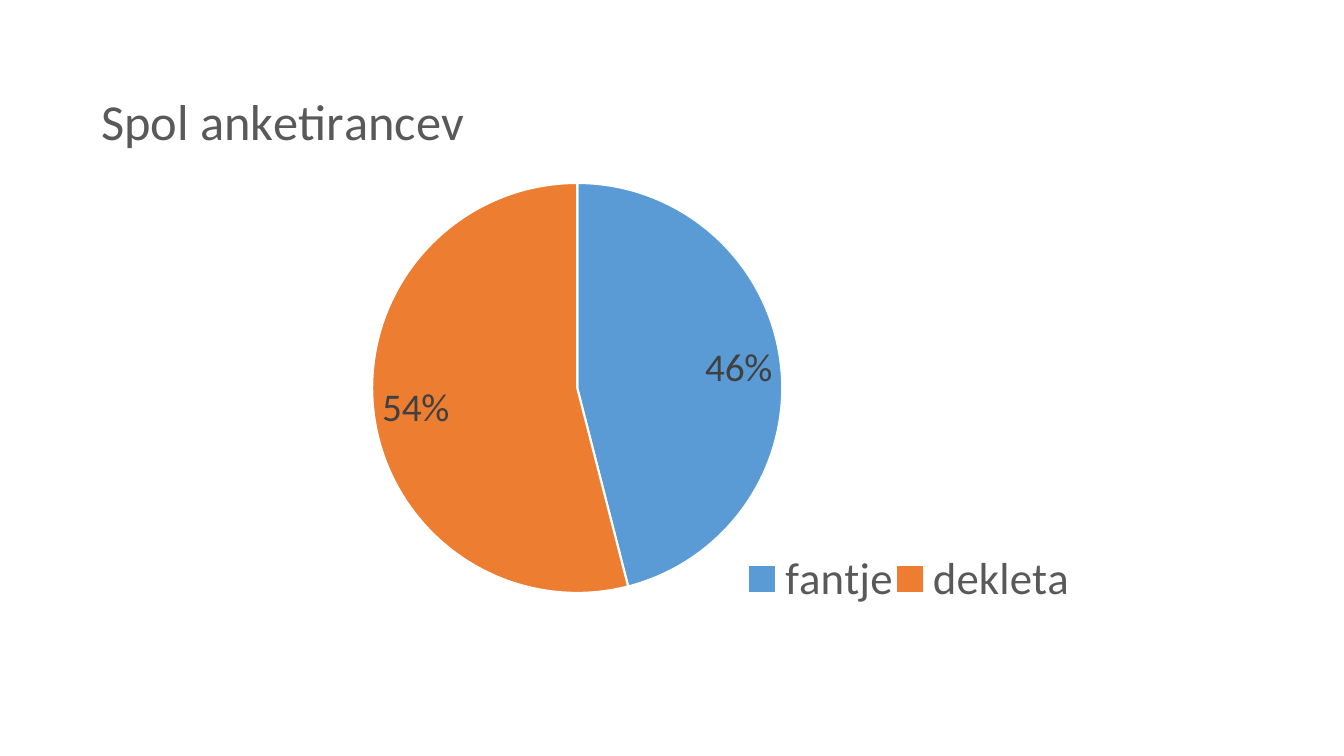
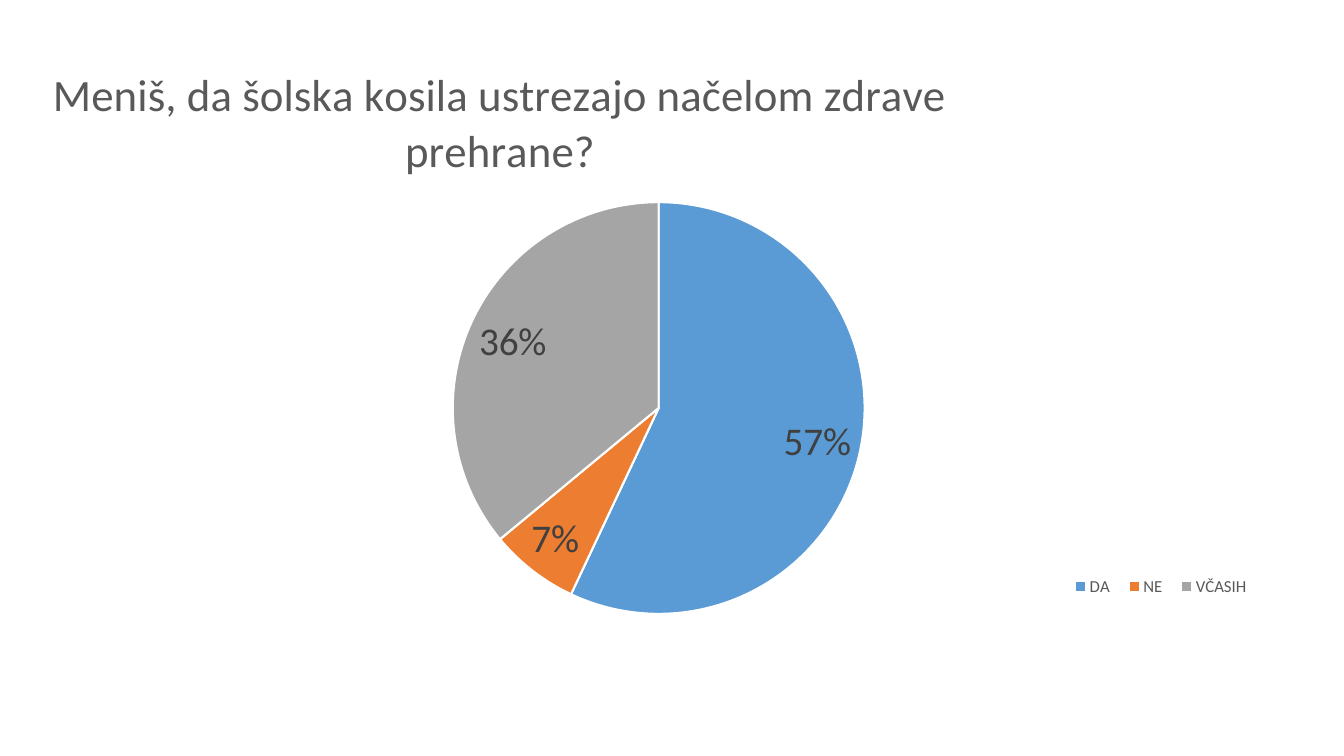
from lxml import etree
from pptx import Presentation
from pptx import util as u
from pptx.chart import data as cd
from pptx.dml import color as dc
from pptx.enum import chart as ec
from pptx.oxml import ns

WIDE, HIGH = u.Inches(13.33), u.Inches(7.5)
FACE = "Calibri"
WHITE = dc.RGBColor(0xFF, 0xFF, 0xFF)
GREY = dc.RGBColor(0x59, 0x59, 0x59)
DARK = dc.RGBColor(0x40, 0x40, 0x40)
BLUE = dc.RGBColor(0x5B, 0x9B, 0xD5)
ORANGE = dc.RGBColor(0xED, 0x7D, 0x31)
SILVER = dc.RGBColor(0xA5, 0xA5, 0xA5)
FILLS = (BLUE, ORANGE, SILVER)

PIES = (
    {
        "box": (0.061, 0.077, 0.737, 0.835),
        "title": "Spol anketirancev",
        "parts": {"fantje": 46, "dekleta": 54},
        "format": '0"%"',
        "sizes": {"title": 36, "legend": 32, "label": 28},
        "spots": {
            "title": (0.01, 0.03),
            "legend": (0.67, 0.78, 0.33, 0.09),
            "plotArea": (0.293, 0.197, 0.414, 0.651),
        },
    },
    {
        "box": (0.024, 0.064, 0.923, 0.855),
        "title": "Meniš, da šolska kosila ustrezajo načelom zdrave prehrane?",
        "parts": {"DA": 0.57, "NE": 0.07, "VČASIH": 0.36},
        "format": "0%",
        "sizes": {"title": 32, "legend": 12, "label": 28},
        "spots": {
            "title": (0.01, 0.01),
            "legend": (0.83, 0.81, 0.16, 0.045),
            "plotArea": (0.339, 0.238, 0.332, 0.637),
        },
    },
)


def style(item, **values):
    """Set each named value on the item."""
    for name, value in values.items():
        setattr(item, name, value)


def write(font, size, tint):
    """Give a font the shared face with a size and colour."""
    style(font, name=FACE, size=u.Pt(size), bold=False)
    font.color.rgb = tint


def place(chart, name, spot):
    """Fix a chart part at shares of the chart's size."""
    part = chart._chartSpace.find(".//" + ns.qn("c:" + name))
    for old in part.findall(ns.qn("c:layout")):
        part.remove(old)
    layout = etree.Element(ns.qn("c:layout"))
    manual = etree.SubElement(layout, ns.qn("c:manualLayout"))
    rules = {"layoutTarget": "inner"} if name == "plotArea" else {}
    rules.update(xMode="edge", yMode="edge")
    rules.update(zip("xywh", spot))
    for key, value in rules.items():
        etree.SubElement(manual, ns.qn("c:" + key)).set("val", str(value))
    heads = [ns.qn("c:tx"), ns.qn("c:legendPos")]
    part.insert(sum(child.tag in heads for child in part), layout)


def paint(plot, pie):
    """Colour the slices and show their values."""
    plot.vary_by_categories = True
    for index, fill in zip(range(len(pie["parts"])), FILLS):
        slice_form = plot.series[0].points[index].format
        slice_form.fill.solid()
        slice_form.fill.fore_color.rgb = fill
        slice_form.line.color.rgb = WHITE
        slice_form.line.width = u.Pt(1.5)
    plot.has_data_labels = True
    labels = plot.data_labels
    style(labels, show_value=True, show_percentage=False,
          number_format=pie["format"], number_format_is_linked=False,
          position=ec.XL_LABEL_POSITION.BEST_FIT)
    write(labels.font, pie["sizes"]["label"], DARK)


def draw(slide, pie):
    """Draw one titled pie chart in its box."""
    data = cd.CategoryChartData()
    data.categories = list(pie["parts"])
    data.add_series("Series 1", list(pie["parts"].values()))
    box = [int(share * side) for share, side in zip(pie["box"], (WIDE, HIGH) * 2)]
    chart = slide.shapes.add_chart(ec.XL_CHART_TYPE.PIE, *box, data).chart
    write(chart.font, 10, GREY)
    style(chart, has_title=True, has_legend=True)
    frame = chart.chart_title.text_frame
    frame.text = pie["title"]
    write(frame.paragraphs[0].runs[0].font, pie["sizes"]["title"], GREY)
    style(chart.legend, position=ec.XL_LEGEND_POSITION.BOTTOM,
          include_in_layout=False)
    write(chart.legend.font, pie["sizes"]["legend"], GREY)
    paint(chart.plots[0], pie)
    for name, spot in pie["spots"].items():
        place(chart, name, spot)


def main():
    """Build and save the deck."""
    deck = Presentation()
    style(deck, slide_width=WIDE, slide_height=HIGH)
    for pie in PIES:
        draw(deck.slides.add_slide(deck.slide_layouts[6]), pie)
    deck.save("out.pptx")


if __name__ == "__main__":
    main()
